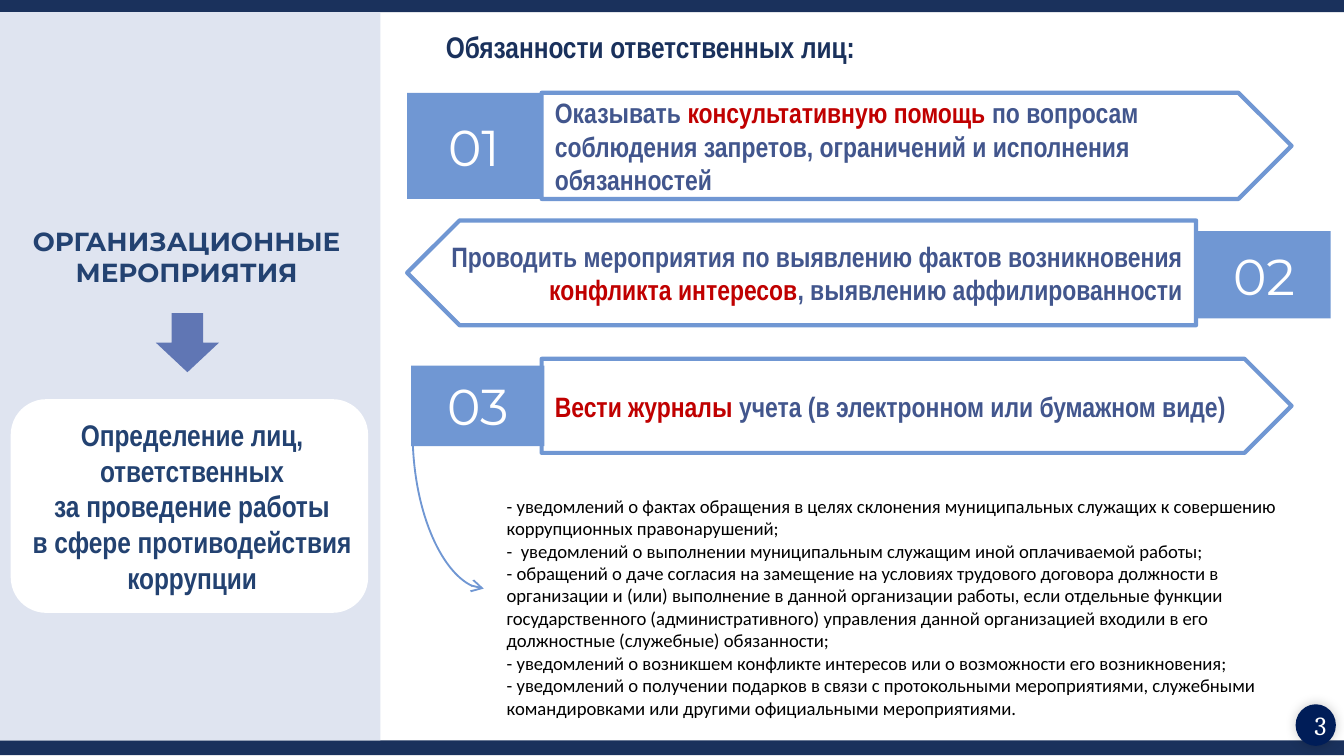
from dataclasses import dataclass

from lxml.etree import SubElement
from pptx import Presentation
from pptx.dml.color import RGBColor
from pptx.enum.shapes import MSO_CONNECTOR, MSO_SHAPE
from pptx.enum.text import MSO_ANCHOR, MSO_AUTO_SIZE, PP_ALIGN
from pptx.oxml.ns import qn
from pptx.util import Inches, Pt

NAVY, PANEL, BLUE, WHITE = "1A315C", "DFE4F0", "7097D3", "FFFFFF"
INK, TEXT, RED = "234271", "42568D", "C00000"
LEFT, MID, RIGHT = PP_ALIGN.LEFT, PP_ALIGN.CENTER, PP_ALIGN.RIGHT
NARROW = {"name": "Arial Narrow", "size": Pt(16), "bold": True}
DUTY = {**NARROW, "size": Pt(15)}
HEAD = {"name": "Montserrat", "size": Pt(14), "bold": True}
DIGIT = {"name": "Montserrat", "size": Pt(27), "bold": False}
NOTE = {"name": "Calibri", "size": Pt(10), "bold": False}
PAGE = {"name": "Cambria", "size": Pt(14), "bold": False}

Box = tuple[float, float, float, float]
Runs = list[tuple[str, str]]


@dataclass
class Duty:
    num: str
    tag: Box
    arrow: Box
    runs: Runs
    flip: bool = False


DUTIES = [
    Duty("01", (3.03, 0.69, 0.99, 0.79), (4.03, 0.69, 5.58, 0.79), [
        ("Оказывать ", TEXT), ("консультативную помощь ", RED),
        ("по вопросам соблюдения запретов, ограничений и исполнения обязанностей", TEXT)]),
    Duty("02", (8.91, 1.72, 0.99, 0.65), (3.03, 1.64, 5.87, 0.78), [
        ("Проводить мероприятия по выявлению фактов возникновения ", TEXT),
        ("конфликта интересов", RED), (", выявлению аффилированности", TEXT)], True),
    Duty("03", (3.06, 2.72, 0.99, 0.6), (4.03, 2.67, 5.58, 0.7), [
        ("Вести журналы ", RED), ("учета (в электронном или бумажном виде)", TEXT)]),
]

NOTES = [
    "- уведомлений о фактах обращения в целях склонения муниципальных служащих к совершению "
    "коррупционных правонарушений;",
    "-  уведомлений о выполнении муниципальным служащим иной оплачиваемой работы;",
    "- обращений о даче согласия на замещение на условиях трудового договора должности в "
    "организации и (или) выполнение в данной организации работы, если отдельные функции "
    "государственного (административного) управления данной организацией входили в его "
    "должностные (служебные) обязанности;",
    "- уведомлений о возникшем конфликте интересов или о возможности его возникновения;",
    "- уведомлений о получении подарков в связи с протокольными мероприятиями, служебными "
    "командировками или другими официальными мероприятиями.",
]


def color(code: str) -> RGBColor:
    return RGBColor.from_string(code)


def place(shape, box: Box) -> None:
    for name, val in zip(("left", "top", "width", "height"), box):
        setattr(shape, name, Inches(val))


def write(par, runs: Runs, fmt: dict, align=LEFT) -> None:
    """Fill one paragraph; a newline in a run becomes a line break."""
    par.alignment = align
    for text, code in runs:
        for i, line in enumerate(text.split("\n")):
            if i:
                par.add_line_break()
            run = par.add_run()
            run.text = line
            for key, val in fmt.items():
                setattr(run.font, key, val)
            run.font.color.rgb = color(code)


def frame(shape, anchor=MSO_ANCHOR.MIDDLE, inset: tuple[float, float] = (0.1, 0.05)):
    """Set up the text frame of a shape and return its first paragraph."""
    x, y = map(Inches, inset)
    opts = {"word_wrap": True, "auto_size": MSO_AUTO_SIZE.NONE, "vertical_anchor": anchor,
            "margin_left": x, "margin_right": x, "margin_top": y, "margin_bottom": y}
    for key, val in opts.items():
        setattr(shape.text_frame, key, val)
    return shape.text_frame.paragraphs[0]


def draw(slide, kind, box: Box, fill: str = "", line: str = ""):
    """Add a preset shape with an optional fill and outline."""
    shape = slide.shapes.add_shape(kind, *map(Inches, box))
    shape.shadow.inherit = False
    if fill:
        shape.fill.solid()
        shape.fill.fore_color.rgb = color(fill)
    else:
        shape.fill.background()
    if line:
        shape.line.color.rgb = color(line)
        shape.line.width = Pt(2.25)
    else:
        shape.line.fill.background()
    return shape


def label(slide, box: Box, text: str, fmt: dict) -> None:
    area = slide.shapes.add_textbox(*map(Inches, box))
    write(frame(area), [(text, INK)], fmt, MID)


def step(slide, duty: Duty) -> None:
    """Draw the numbered tag and the arrow of one duty."""
    tag = draw(slide, MSO_SHAPE.RECTANGLE, duty.tag, BLUE)
    write(frame(tag, inset=(0.07, 0.04)), [(duty.num, WHITE)], DIGIT, MID)
    arrow = draw(slide, MSO_SHAPE.PENTAGON, duty.arrow, line=BLUE)
    if duty.flip:
        arrow.element.spPr.find(qn("a:xfrm")).set("flipH", "1")
    write(frame(arrow), duty.runs, DUTY, RIGHT if duty.flip else LEFT)


def curve(slide) -> None:
    """Draw the bent arrow that leads from duty 03 down to the notes."""
    link = slide.shapes.add_connector(MSO_CONNECTOR.CURVE, 0, 0, 0, 0)
    place(link, (2.75, 3.53, 1.17, 0.53))
    link.rotation = 270
    link.line.color.rgb = color(BLUE)
    link.line.width = Pt(1)
    props = link._element.spPr
    props.find(qn("a:xfrm")).set("flipH", "1")
    props.find(qn("a:prstGeom")).set("prst", "curvedConnector2")
    SubElement(props.find(qn("a:ln")), qn("a:tailEnd"), type="arrow")
    SubElement(props, qn("a:effectLst"))


def notes(body) -> None:
    place(body, (3.67, 3.63, 6.22, 1.78))
    par = frame(body, MSO_ANCHOR.TOP)
    for i, text in enumerate(NOTES):
        par = body.text_frame.add_paragraph() if i else par
        props = par._p.get_or_add_pPr()
        props.set("marL", "0")
        props.set("indent", "0")
        SubElement(props, qn("a:buNone"))
        par.space_before = Pt(0)
        write(par, [(text, "000000")], NOTE)


def badge(slide) -> None:
    """Draw the page number on a softly shaded disc."""
    disc = draw(slide, MSO_SHAPE.OVAL, (9.64, 5.24, 0.3, 0.31), "001D58")
    glow = SubElement(disc.element.spPr.find(qn("a:effectLst")), qn("a:outerShdw"),
                      blurRad=str(Pt(6)), dist="0", dir="13500000")
    tone = SubElement(glow, qn("a:srgbClr"), val="000000")
    SubElement(tone, qn("a:alpha"), val="20000")
    par = frame(disc, inset=(0, 0))
    disc.text_frame.margin_left = Inches(0.07)
    write(par, [("3", WHITE)], PAGE, MID)


def main() -> None:
    deck = Presentation()
    deck.slide_width = Inches(10)
    deck.slide_height = deck.slide_width * 9 // 16
    slide = deck.slides.add_slide(deck.slide_layouts[1])

    title, body = slide.placeholders
    place(title, (2.83, 0.22, 4.02, 0.31))
    write(frame(title, MSO_ANCHOR.BOTTOM), [("Обязанности ответственных лиц:", NAVY)], NARROW, MID)
    notes(body)

    for top in (-0.02, 5.51):
        draw(slide, MSO_SHAPE.RECTANGLE, (0, top, 10, 0.11), NAVY)
    draw(slide, MSO_SHAPE.RECTANGLE, (-0.01, 0.09, 2.84, 5.42), PANEL)
    label(slide, (0.06, 0.69, 2.66, 2.44), "ОРГАНИЗАЦИОННЫЕ МЕРОПРИЯТИЯ", HEAD)
    draw(slide, MSO_SHAPE.DOWN_ARROW, (1.16, 2.33, 0.47, 0.44), "6076B4")
    draw(slide, MSO_SHAPE.ROUNDED_RECTANGLE, (0.08, 2.97, 2.66, 1.59), WHITE)
    label(slide, (0.1, 2.97, 2.66, 1.59), "Определение лиц, ответственных\nза проведение работы\n"
          "в сфере противодействия коррупции", NARROW)

    for duty in DUTIES:
        step(slide, duty)
    curve(slide)
    badge(slide)
    deck.save("out.pptx")


if __name__ == "__main__":
    main()
